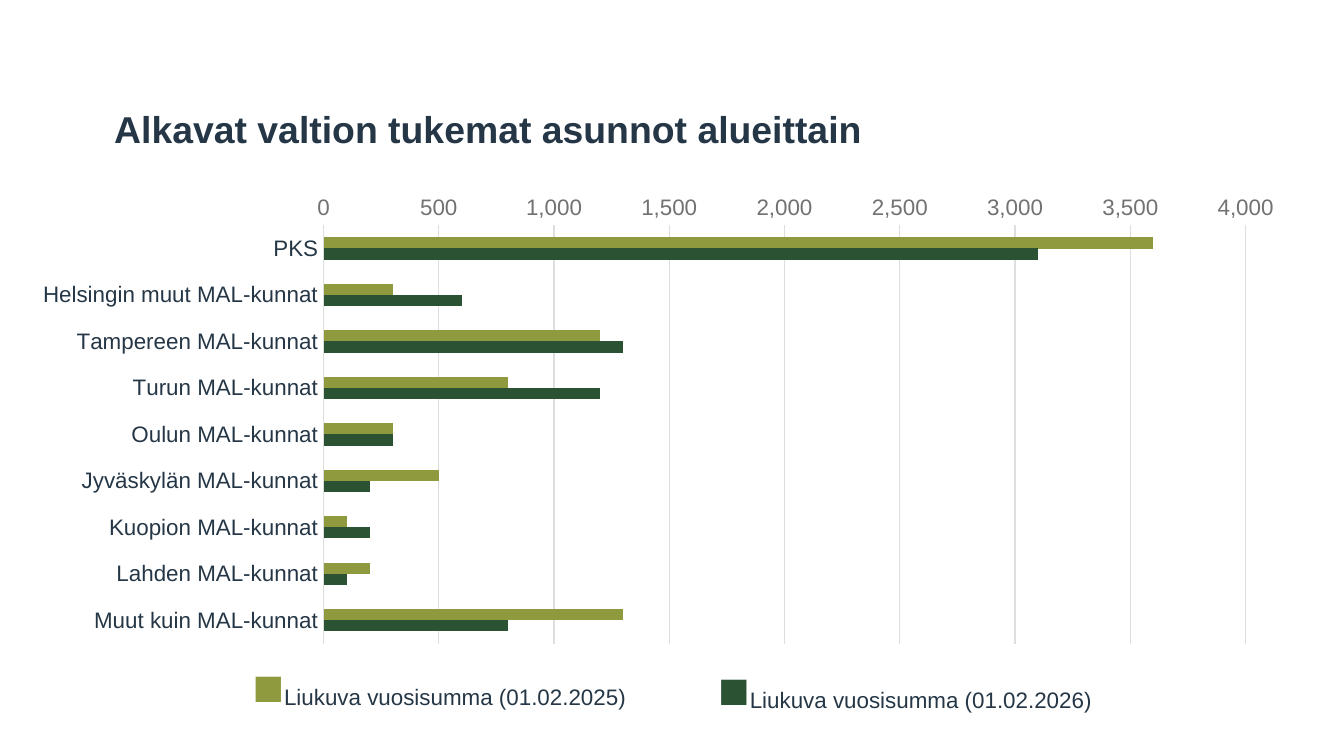
"""Build a slide with a bar chart of state-supported housing starts by region."""
from lxml import etree
from pptx import Presentation
from pptx.chart.data import CategoryChartData
from pptx.dml.color import RGBColor
from pptx.enum import chart as ch, text
from pptx.oxml.ns import qn
from pptx.util import Inches, Pt


def style(font, size, color, name="Arial", bold=False):
    font.size, font.name, font.bold = Pt(size), name, bold
    font.color.rgb = RGBColor.from_string(color)


def write(frame, *runs, align=text.PP_ALIGN.LEFT, bold=False, after=0):
    frame.word_wrap = True
    frame.auto_size = text.MSO_AUTO_SIZE.NONE
    frame.vertical_anchor = text.MSO_ANCHOR.MIDDLE
    paragraph = frame.paragraphs[0]
    paragraph.alignment, paragraph.space_after = align, Pt(after)
    for words, size, color in runs:
        run = paragraph.add_run()
        run.text = words
        style(run.font, size, color, bold=bold)


NAVY, GRID = "253746", "DEDEDE"
regions = ["PKS"] + [f"{area} MAL-kunnat" for area in (
    "Helsingin muut", "Tampereen", "Turun", "Oulun",
    "Jyväskylän", "Kuopion", "Lahden", "Muut kuin")]
years = [
    ("Series 1", (3600, 300, 1200, 800, 300, 500, 100, 200, 1300), "8F993E"),
    ("Series 2", (3100, 600, 1300, 1200, 300, 200, 200, 100, 800), "2C5234"),
]
legends = [
    ("Liukuva vuosisumma (01.02.2025)", 1.46, 4.86, 3.62),
    ("Liukuva vuosisumma (01.02.2026)", 5.24, 4.88, 2.99),
]

prs = Presentation()
prs.slide_width = Inches(10)
prs.slide_height = prs.slide_width * 9 // 16
slide = prs.slides.add_slide(prs.slide_layouts[5])

data = CategoryChartData(number_format="#,##0")
data.categories = regions
for name, starts, color in years:
    data.add_series(name, starts)
chart = slide.shapes.add_chart(
    ch.XL_CHART_TYPE.BAR_CLUSTERED, Inches(0.12), Inches(1.4),
    Inches(9.53), Inches(3.46), data).chart
chart.has_legend = chart.has_title = False
style(chart.font, 10, "262626", "DejaVu Sans")

plot = chart.plots[0]
plot.gap_width, plot.overlap, plot.vary_by_categories = 219, 1, False
for series, (name, starts, color) in zip(plot.series, years):
    series.format.fill.solid()
    series.format.fill.fore_color.rgb = RGBColor.from_string(color)

region_axis, count_axis = chart.category_axis, chart.value_axis
for axis, color in ((region_axis, NAVY), (count_axis, "727272")):
    axis.major_tick_mark = axis.minor_tick_mark = ch.XL_TICK_MARK.NONE
    style(axis.tick_labels.font, 12, color)
region_axis.reverse_order = True
count_axis.minimum_scale, count_axis.maximum_scale = 0, 4000
count_axis.major_unit = 500
count_axis.tick_labels.number_format = "#,##0"
count_axis.tick_labels.number_format_is_linked = False
count_axis.format.line.fill.background()
for line in (region_axis.format.line, count_axis.major_gridlines.format.line):
    line.color.rgb = RGBColor.from_string(GRID)
    line.width = Pt(0.75)

plot_area = chart.element.find(".//" + qn("c:plotArea"))
layout = plot_area.find(qn("c:layout"))
if layout is None:
    layout = etree.Element(qn("c:layout"))
    plot_area.insert(0, layout)
manual = etree.SubElement(layout, qn("c:manualLayout"))
for tag, value in (("layoutTarget", "inner"), ("xMode", "edge"), ("yMode", "edge"),
                   ("x", 0.24), ("y", 0.08), ("w", 0.72), ("h", 0.9)):
    etree.SubElement(manual, qn(f"c:{tag}")).set("val", str(value))

heading = slide.shapes.title
heading.left, heading.top = Inches(0.75), Inches(0.77)
heading.width, heading.height = Inches(9.17), Inches(0.38)
write(heading.text_frame,
      ("Alkavat valtion tukemat asunnot alueittain", 20, NAVY), bold=True)

for (label, left, top, width), (name, starts, color) in zip(legends, years):
    legend = slide.shapes.add_textbox(
        Inches(left), Inches(top), Inches(width), Inches(0.47))
    write(legend.text_frame, ("■", 28, color), (label, 12, NAVY),
          align=text.PP_ALIGN.CENTER, after=12)

prs.save("out.pptx")
